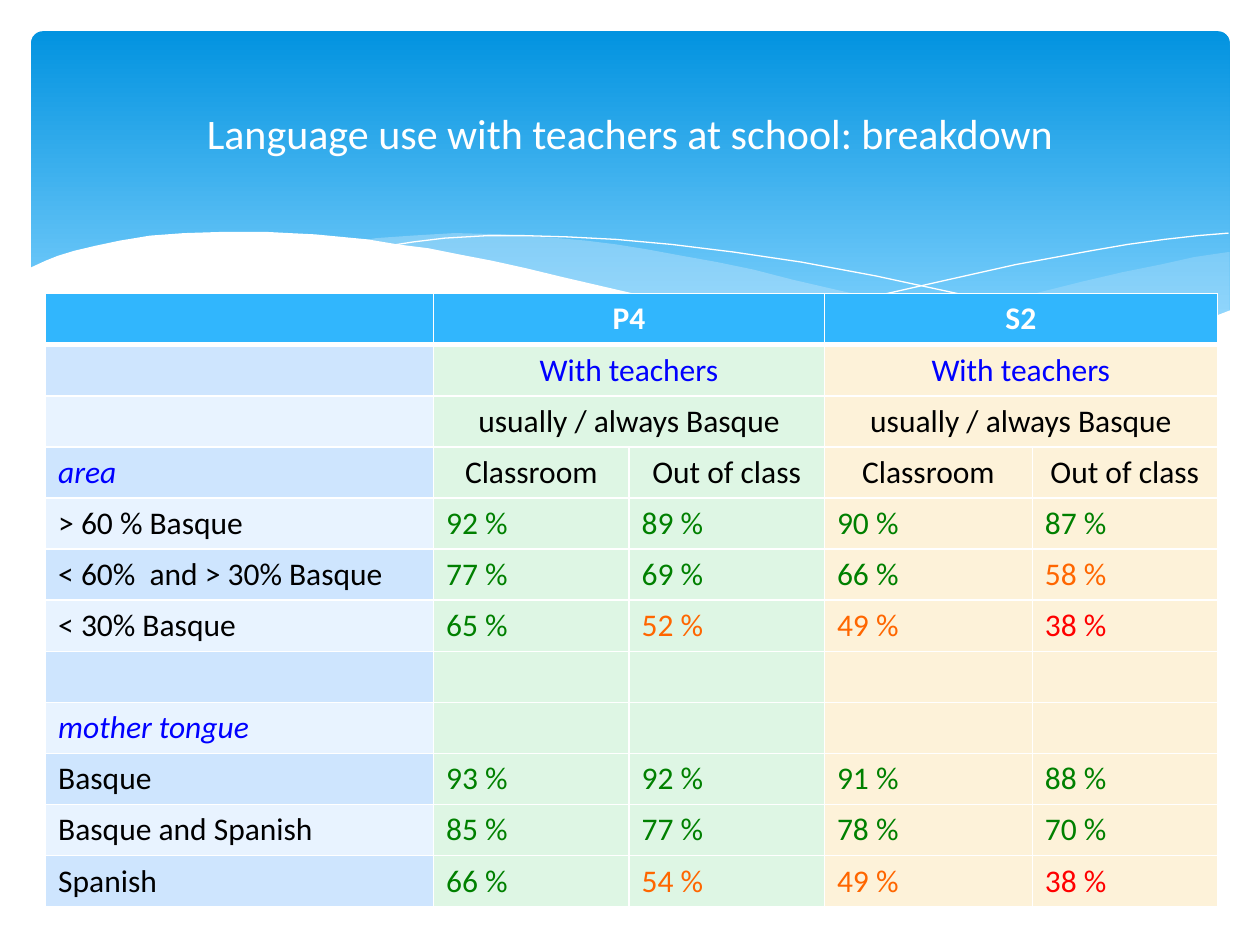
from lxml import etree
from pptx import Presentation
from pptx import util as u
from pptx.dml.color import RGBColor
from pptx.enum import shapes, text
from pptx.oxml.ns import qn

FONT = "Calibri"
WHITE, BLACK, BLUE = "FFFFFF", "000000", "0000FF"
GREEN, ORANGE, RED = "008000", "FF6600", "FF0000"
HEADER, P4_FILL, S2_FILL = "31B6FD", "DEF6E4", "FDF2D9"
LABEL_FILLS = ("E8F3FF", "CEE5FE")
COL_WIDTHS = (7.82, 3.94, 3.94, 4.19, 3.73)

MERGED_ROWS = (
    ("P4", "S2", WHITE),
    ("With teachers", "With teachers", BLUE),
    ("usually / always Basque", "usually / always Basque", BLACK),
)
BODY_ROWS = (
    ("area", "Classroom", "Out of class", "Classroom", "Out of class"),
    ("> 60 % Basque", 92, 89, 90, 87),
    ("< 60%  and > 30% Basque", 77, 69, 66, 58),
    ("< 30% Basque", 65, 52, 49, 38),
    ("", "", "", "", ""),
    ("mother tongue", "", "", "", ""),
    ("Basque", 93, 92, 91, 88),
    ("Basque and Spanish", 85, 77, 78, 70),
    ("Spanish", 66, 54, 49, 38),
)

RIGHT_WAVE = (
    (975, 200), (948, 204), (921, 210), (891, 216), (861, 223), (805, 237),
    (753, 248), (706, 257), (661, 265), (691, 269), (719, 272), (745, 275),
    (769, 277), (803, 278), (835, 277), (863, 275), (889, 272), (913, 267),
    (935, 262), (949, 257), (963, 252), (976, 247), (976, 200),
)
MIDDLE_WAVE = (
    (893, 273), (866, 269), (807, 260), (741, 247), (668, 231), (629, 222),
    (598, 214), (569, 208), (541, 203), (514, 198), (489, 194), (465, 191),
    (442, 189), (399, 186), (361, 185), (328, 187), (299, 189), (286, 191),
    (323, 196), (362, 203), (404, 211), (449, 222), (530, 240), (584, 252),
    (634, 261), (680, 268), (722, 274), (761, 277), (796, 278), (838, 278),
    (867, 276),
)
FALLING_LINE = (
    (309, 195), (328, 192), (353, 189), (387, 187), (416, 187), (450, 188),
    (489, 190), (533, 194), (582, 200), (636, 208), (695, 219), (760, 233),
    (831, 251), (869, 261), (907, 272),
)
RISING_LINE = (
    (613, 257), (653, 246), (695, 235), (748, 223), (806, 210), (866, 199),
    (895, 194), (924, 190), (951, 187), (975, 185),
)
WHITE_WAVE = (
    (977, 246), (959, 253), (940, 259), (920, 265), (899, 269), (875, 273),
    (850, 275), (823, 277), (793, 276), (761, 275), (726, 272), (688, 268),
    (648, 262), (603, 254), (555, 245), (503, 233), (447, 220), (418, 213),
    (391, 207), (365, 202), (340, 197), (316, 194), (292, 190), (271, 188),
    (250, 186), (230, 185), (211, 184), (177, 184), (146, 185), (119, 187),
    (95, 191), (76, 195), (59, 199), (46, 203), (36, 207), (23, 213),
    (23, 329), (977, 329),
)


def rgb(value):
    """Return the colour for a hex string."""
    return RGBColor.from_string(value)


def add_banner(s):
    """Add the rounded gradient band."""
    sp = s.shapes.add_shape(shapes.MSO_SHAPE.ROUNDED_RECTANGLE,
                            u.Cm(0.63), u.Cm(0.63), u.Cm(24.16), u.Cm(6.86))
    sp.adjustments[0] = 0.034
    sp.shadow.inherit = False
    sp.line.fill.background()
    sp.fill.gradient()
    sp.fill.gradient_angle = 270
    for stop, (color, place) in zip(sp.fill.gradient_stops,
                                    (("0293E0", 0), ("83D3FE", 0.9))):
        stop.color.rgb = rgb(color)
        stop.position = place


def add_outline(s, points, closed):
    """Draw points given in hundredths of an inch."""
    builder = s.shapes.build_freeform(*points[0], scale=u.Cm(0.0254))
    builder.add_line_segments(points[1:], close=closed)
    sp = builder.convert_to_shape()
    sp.shadow.inherit = False
    return sp


def add_wave(s, points, color, alpha=100):
    """Add a filled wave with an opacity in percent."""
    sp = add_outline(s, points, True)
    sp.line.fill.background()
    sp.fill.solid()
    sp.fill.fore_color.rgb = rgb(color)
    if alpha < 100:
        clr = sp.element.spPr.find(qn("a:solidFill"))[0]
        etree.SubElement(clr, qn("a:alpha"), val=str(alpha * 1000))


def add_curve(s, points):
    """Add a white hairline curve."""
    sp = add_outline(s, points, False)
    sp.fill.background()
    sp.line.color.rgb = rgb(WHITE)
    sp.line.width = u.Pt(0)


def set_borders(cell, top=1, bottom=1):
    """Give a cell white borders with widths in points."""
    tc_pr = cell._tc.get_or_add_tcPr()
    for side, width in (("L", 1), ("R", 1), ("T", top), ("B", bottom)):
        ln = etree.SubElement(tc_pr, qn(f"a:ln{side}"), w=str(u.Pt(width)))
        fill = etree.SubElement(ln, qn("a:solidFill"))
        etree.SubElement(fill, qn("a:srgbClr"), val=WHITE)


def write_cell(cell, words, color, centered=False, bold=False, italic=False):
    """Write a cell and format its paragraph."""
    cell.text = words
    p = cell.text_frame.paragraphs[0]
    p.alignment = text.PP_ALIGN.CENTER if centered else text.PP_ALIGN.LEFT
    p.font.name, p.font.size = FONT, u.Pt(18)
    p.font.bold, p.font.italic = bold, italic
    p.font.color.rgb = rgb(color)


def share_color(share):
    """Return the colour that grades a percentage."""
    return GREEN if share >= 60 else ORANGE if share >= 40 else RED


def paint_cells(table):
    """Set the borders and fill of every cell."""
    for i, row in enumerate(table.rows):
        fills = (LABEL_FILLS[i % 2], P4_FILL, P4_FILL, S2_FILL, S2_FILL)
        for cell, color in zip(row.cells, fills):
            set_borders(cell, 3 if i == 1 else 1, 3 if i == 0 else 1)
            cell.fill.solid()
            cell.fill.fore_color.rgb = rgb(HEADER if i == 0 else color)


def add_breakdown(s):
    """Add the table of language use by area and mother tongue."""
    n_rows = len(MERGED_ROWS) + len(BODY_ROWS)
    table = s.shapes.add_table(n_rows, len(COL_WIDTHS), u.Cm(0.92), u.Cm(5.92),
                               u.Cm(sum(COL_WIDTHS)), u.Cm(1.03 * n_rows)).table
    for column, width in zip(table.columns, COL_WIDTHS):
        column.width = u.Cm(width)
    paint_cells(table)
    for i, (p4, s2, color) in enumerate(MERGED_ROWS):
        for j, words in ((1, p4), (3, s2)):
            table.cell(i, j).merge(table.cell(i, j + 1))
            write_cell(table.cell(i, j), words, color, True, bold=i == 0)
    for i, (label, *values) in enumerate(BODY_ROWS, len(MERGED_ROWS)):
        heading = label in ("area", "mother tongue")
        write_cell(table.cell(i, 0), label, BLUE if heading else BLACK,
                   italic=heading)
        for j, value in enumerate(values, 1):
            if isinstance(value, int):
                write_cell(table.cell(i, j), f"{value} %", share_color(value))
            else:
                write_cell(table.cell(i, j), value, BLACK, True)


def add_title(s, words):
    """Fill the title placeholder and bring it to the front."""
    sp = s.shapes.title
    sp.left, sp.top, sp.width, sp.height = map(u.Cm, (1.27, 0.94, 22.86, 3.48))
    tf = sp.text_frame
    tf.text = words
    tf.vertical_anchor = text.MSO_ANCHOR.MIDDLE
    p = tf.paragraphs[0]
    p.alignment = text.PP_ALIGN.CENTER
    p.font.name, p.font.size = FONT, u.Pt(24)
    p.font.color.rgb = rgb(WHITE)
    sp.element.getparent().append(sp.element)


def main():
    """Build and save the slide."""
    prs = Presentation()
    prs.slide_width, prs.slide_height = u.Cm(25.4), u.Cm(19.05)
    s = prs.slides.add_slide(prs.slide_layouts[5])
    add_banner(s)
    add_wave(s, RIGHT_WAVE, "C6E7FC", 29)
    add_wave(s, MIDDLE_WAVE, "C6E7FC", 40)
    add_curve(s, FALLING_LINE)
    add_curve(s, RISING_LINE)
    add_wave(s, WHITE_WAVE, WHITE)
    add_breakdown(s)
    add_title(s, "Language use with teachers at school: breakdown")
    prs.save("out.pptx")


if __name__ == "__main__":
    main()
